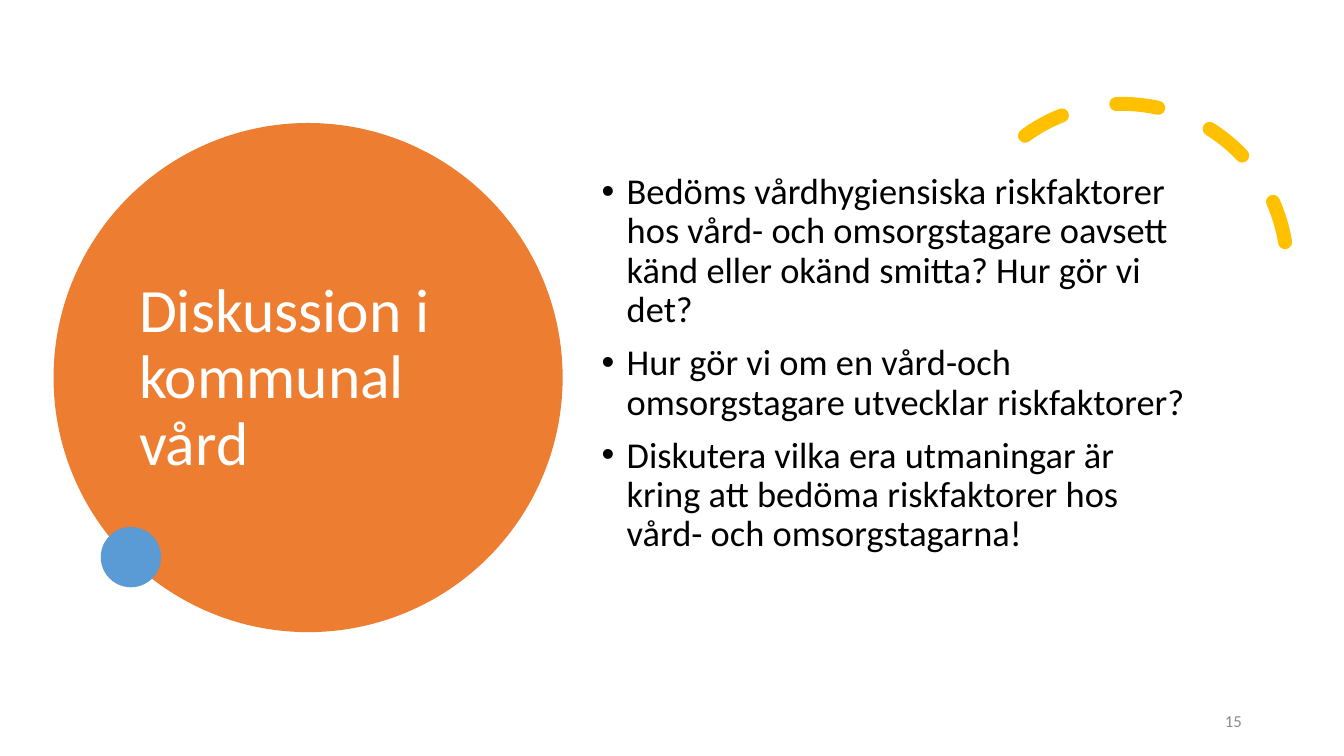
from dataclasses import dataclass

from lxml import etree
from pptx import Presentation
from pptx.dml.color import RGBColor
from pptx.enum.dml import MSO_LINE
from pptx.enum.shapes import MSO_SHAPE
from pptx.enum.text import MSO_ANCHOR, MSO_AUTO_SIZE, PP_ALIGN
from pptx.oxml.ns import qn
from pptx.util import Cm, Pt

OVAL, ARC = MSO_SHAPE.OVAL, MSO_SHAPE.ARC
DASH = MSO_LINE.DASH
TOP, MIDDLE = MSO_ANCHOR.TOP, MSO_ANCHOR.MIDDLE
LEFT, RIGHT = PP_ALIGN.LEFT, PP_ALIGN.RIGHT
NO_FIT = MSO_AUTO_SIZE.NONE
TITLE_ONLY = 5


@dataclass(frozen=True)
class Theme:
    font: str = "Calibri"
    orange: str = "ED7D31"
    blue: str = "5B9BD5"
    gold: str = "FFC000"
    white: str = "FFFFFF"
    black: str = "000000"
    grey: str = "8C8C8C"
    title: int = 44
    body: int = 26
    number: int = 12


theme = Theme()
points = [
    "Bedöms vårdhygiensiska riskfaktorer hos vård- och omsorgstagare "
    "oavsett känd eller okänd smitta? Hur gör vi det?",
    "Hur gör vi om en vård-och omsorgstagare utvecklar riskfaktorer?",
    "Diskutera vilka era utmaningar är kring att bedöma riskfaktorer hos "
    "vård- och omsorgstagarna!",
]


def set_text(shape, lines, size, color, anchor, align):
    frame = shape.text_frame
    frame.text = "\n".join(lines)
    frame.word_wrap = True
    frame.auto_size = NO_FIT
    frame.vertical_anchor = anchor
    for para in frame.paragraphs:
        para.alignment = align
        font = para.runs[0].font
        font.name = theme.font
        font.size = Pt(size)
        font.color.rgb = RGBColor.from_string(color)


deck = Presentation()
deck.slide_width, deck.slide_height = Cm(33.87), Cm(19.05)
slide = deck.slides.add_slide(deck.slide_layouts[TITLE_ONLY])
shapes = slide.shapes

# Title on the large disc
title = shapes.title
title.left, title.top = Cm(3.25), Cm(3.89)
title.width, title.height = Cm(8.99), Cm(11.3)
set_text(title, ["Diskussion i kommunal vård"], theme.title, theme.white,
         MIDDLE, LEFT)
title.text_frame.paragraphs[0].line_spacing = 0.9

# Dashed arc with round ends
arc = shapes.add_shape(ARC, Cm(24.13), Cm(2.62), Cm(8.31), Cm(8.31))
arc.shadow.inherit = False
arc.rotation = 330.2
arc.adjustments[0], arc.adjustments[1] = 158.17, 17.81
arc.fill.background()
arc.line.color.rgb = RGBColor.from_string(theme.gold)
arc.line.width = Pt(10)
arc.line.dash_style = DASH
arc.line._get_or_add_ln().set("cap", "rnd")

# Discs
discs = []
for left, top, size, color in [(1.35, 3.1, 12.83, theme.orange),
                               (2.54, 13.28, 1.52, theme.blue)]:
    disc = shapes.add_shape(OVAL, Cm(left), Cm(top), Cm(size), Cm(size))
    disc.shadow.inherit = False
    disc.fill.solid()
    disc.fill.fore_color.rgb = RGBColor.from_string(color)
    disc.line.fill.background()
    discs.append(disc)
title._element.addprevious(discs[0]._element)

# Discussion points
body = shapes.add_textbox(Cm(14.91), Cm(4.24), Cm(15.37), Cm(10.92))
set_text(body, points, theme.body, theme.black, TOP, LEFT)
for para in body.text_frame.paragraphs:
    para.line_spacing = 0.9
    para.space_before = Pt(10)
    props = para._p.get_or_add_pPr()
    props.set("marL", str(Pt(18)))
    props.set("indent", str(-Pt(18)))
    etree.SubElement(props, qn("a:buFont")).set("typeface", "Arial")
    etree.SubElement(props, qn("a:buChar")).set("char", "•")

# Slide number
number = shapes.add_textbox(Cm(23.93), Cm(17.65), Cm(7.62), Cm(1.02))
set_text(number, ["15"], theme.number, theme.grey, MIDDLE, RIGHT)
number.text_frame.paragraphs[0].space_after = Pt(6)

deck.save("out.pptx")
